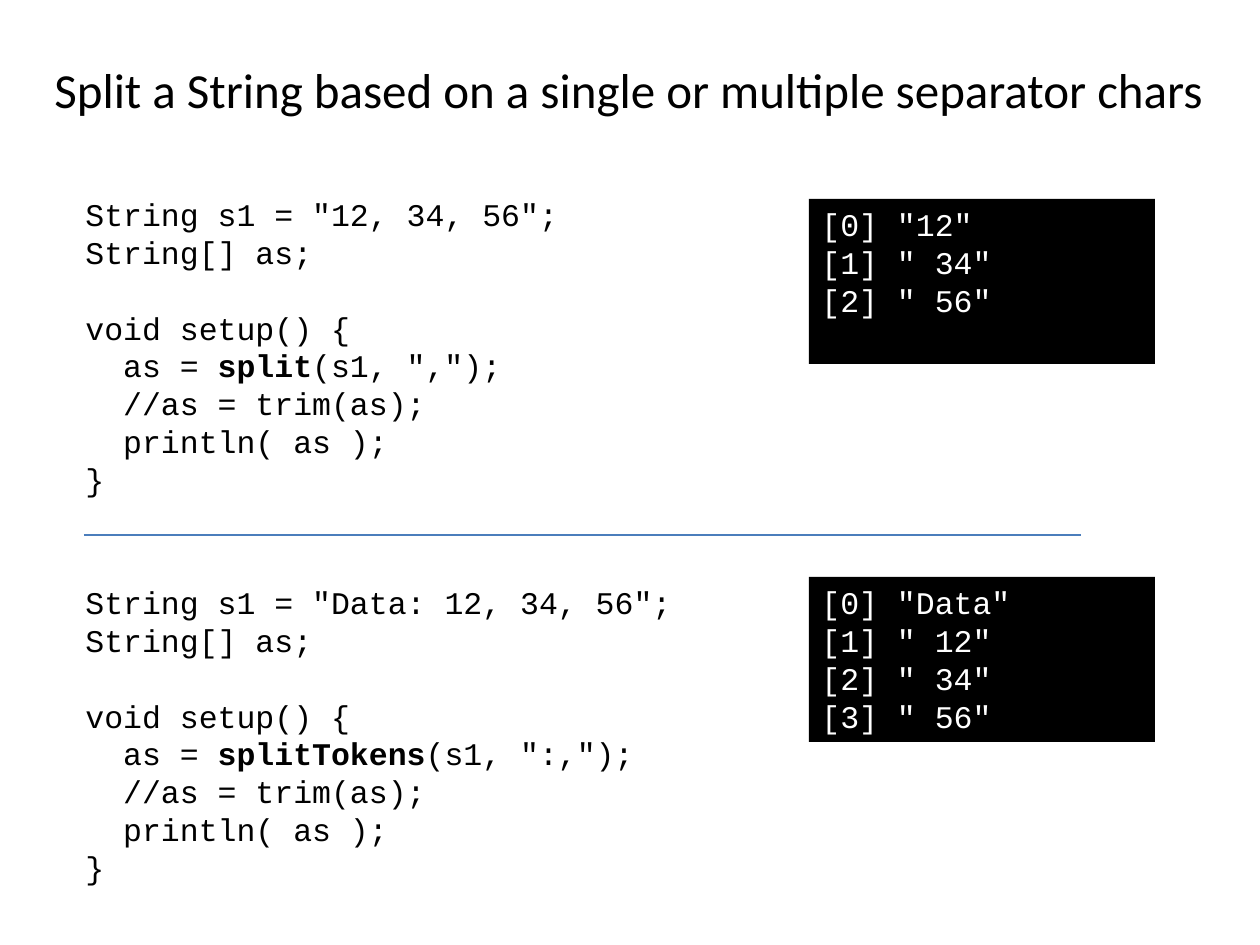
from lxml import etree
from pptx import Presentation
from pptx import util as u
from pptx.dml.color import RGBColor
from pptx.enum import shapes, text
from pptx.oxml.ns import qn

PX = u.Inches(1) // 126
BLACK = RGBColor(0x00, 0x00, 0x00)
WHITE = RGBColor(0xFF, 0xFF, 0xFF)
BLUE = RGBColor(0x4B, 0x7E, 0xBC)
CODE_FONT, TITLE_FONT = "Courier New", "Calibri"
CODE_SIZE = 18
BLANK_LINE = 21.6

# Each example: top of code, top of console, declared text, function, separators, output
EXAMPLES = [
    (189, 199, "12, 34, 56", "split", ",", ["12", " 34", " 56"]),
    (577, 577, "Data: 12, 34, 56", "splitTokens", ":,",
     ["Data", " 12", " 34", " 56"]),
]


def box(left, top, width, height):
    return [value * PX for value in (left, top, width, height)]


def write_lines(frame, lines, font_name, size, color):
    """Write one paragraph per line; a line is a list of (text, bold) runs."""
    for index, runs in enumerate(lines):
        paragraph = frame.paragraphs[0] if index == 0 else frame.add_paragraph()
        paragraph.alignment = text.PP_ALIGN.LEFT
        paragraph.font.name = font_name
        paragraph.font.size = u.Pt(size)
        paragraph.font.color.rgb = color
        for words, bold in runs:
            run = paragraph.add_run()
            run.text = words
            if bold:
                run.font.bold = True


def plain(*lines):
    return [[(line, False)] for line in lines]


def add_title(slide, words):
    frame = slide.shapes.add_textbox(*box(42, 53, 1187, 72)).text_frame
    frame.word_wrap = False
    write_lines(frame, plain(words), TITLE_FONT, 28, BLACK)


def add_code(slide, top, value, function, separators):
    frame = slide.shapes.add_textbox(*box(73, top, 672, 318)).text_frame
    frame.word_wrap = True
    declarations = plain(f'String s1 = "{value}";', "String[] as;")
    call = [("  as = ", False), (function, True), (f'(s1, "{separators}");', False)]
    setup = plain("void setup() {") + [call] + plain(
        "  //as = trim(as);", "  println( as );", "}")
    write_lines(frame, declarations + setup, CODE_FONT, CODE_SIZE, BLACK)
    # Separate setup() from the declarations by one line
    frame.paragraphs[len(declarations)].space_before = u.Pt(BLANK_LINE)


def add_console(slide, top, values):
    console = slide.shapes.add_shape(
        shapes.MSO_SHAPE.RECTANGLE, *box(809, top, 346, 165))
    console.shadow.inherit = False
    console.fill.solid()
    console.fill.fore_color.rgb = BLACK
    console.line.fill.background()
    frame = console.text_frame
    frame.word_wrap = True
    frame.vertical_anchor = text.MSO_ANCHOR.TOP
    output = plain(*(f'[{i}] "{value}"' for i, value in enumerate(values)))
    write_lines(frame, output, CODE_FONT, CODE_SIZE, WHITE)


def add_divider(slide, left, right, y):
    divider = slide.shapes.add_connector(
        shapes.MSO_CONNECTOR.STRAIGHT, left * PX, y * PX, right * PX, y * PX)
    divider.line.color.rgb = BLUE
    divider.line.width = u.Pt(0.75)
    etree.SubElement(divider._element.spPr, qn("a:effectLst"))


def main():
    presentation = Presentation()
    presentation.slide_width = u.Inches(10)
    presentation.slide_height = u.Inches(7.5)
    slide = presentation.slides.add_slide(presentation.slide_layouts[6])

    add_title(slide, "Split a String based on a single or multiple separator chars")
    for code_top, console_top, value, function, separators, output in EXAMPLES:
        add_code(slide, code_top, value, function, separators)
        add_console(slide, console_top, output)
    add_divider(slide, 84, 1081, 535)

    presentation.save("out.pptx")


if __name__ == "__main__":
    main()
